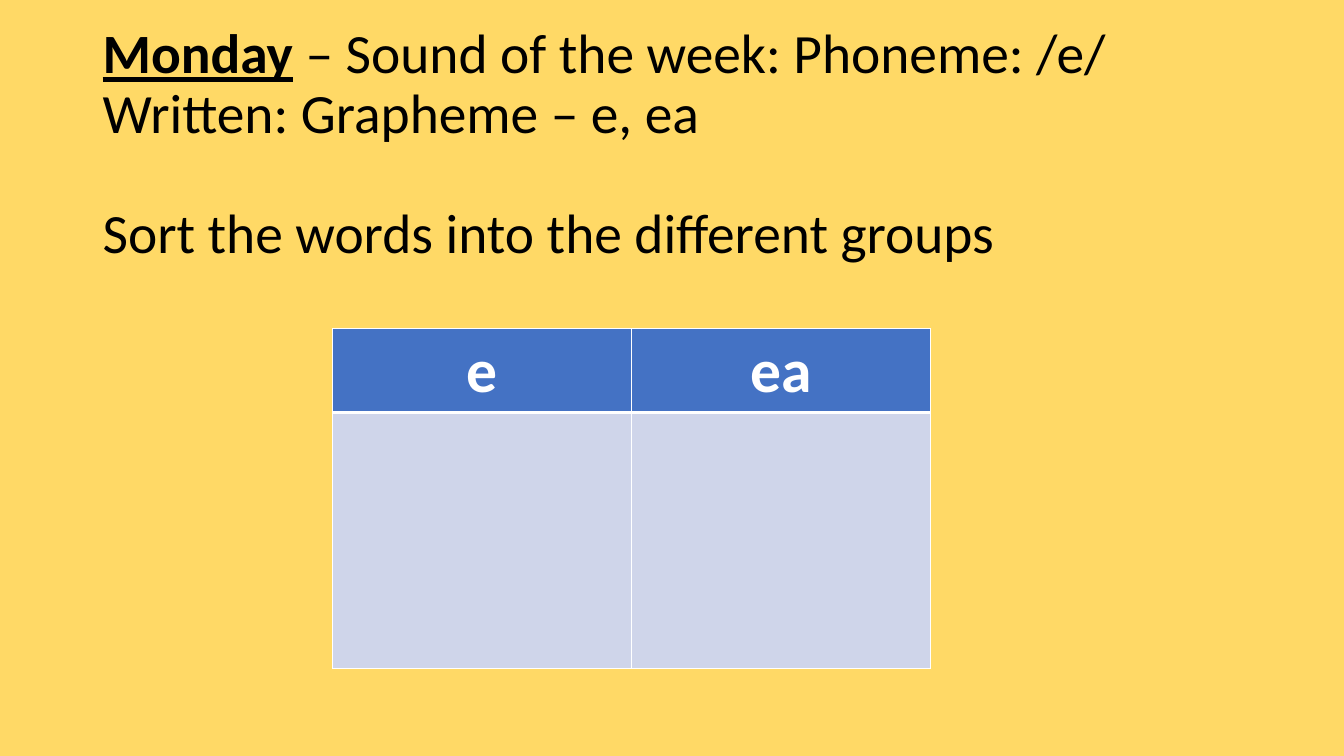
import pptx
import pptx.util
import pptx.dml.color
import pptx.enum.text
import pptx.oxml
import pptx.oxml.ns

Inches = pptx.util.Inches
Pt = pptx.util.Pt
BLACK, WHITE = "000000", "FFFFFF"
GOLD, BLUE, PALE = "FFD966", "4472C4", "CFD5EA"


def paint(target, shade):
    target.rgb = pptx.dml.color.RGBColor.from_string(shade)


def fill(target, shade):
    target.solid()
    paint(target.fore_color, shade)


def write(para, text, size, shade, bold=False, under=False):
    run = para.add_run()
    run.text = text
    font = run.font
    font.name = "Calibri"
    font.size = Pt(size)
    font.bold = bold
    font.underline = under
    paint(font.color, shade)


def edge(cell, widths):
    props = cell._tc.get_or_add_tcPr()
    for spot, (side, width) in enumerate(zip("LRTB", widths)):
        line = pptx.oxml.parse_xml(
            f'<a:ln{side} {pptx.oxml.ns.nsdecls("a")} w="{Pt(width)}">'
            f'<a:solidFill><a:srgbClr val="{WHITE}"/></a:solidFill></a:ln{side}>')
        props.insert(spot, line)


def add_title(slide, left, top, width, height):
    size = 39.6
    box = slide.shapes.add_textbox(Inches(left), Inches(top), Inches(width), Inches(height))
    frame = box.text_frame
    frame.word_wrap = True
    frame.vertical_anchor = pptx.enum.text.MSO_ANCHOR.MIDDLE
    sound = frame.paragraphs[0]
    write(sound, "Monday", size, BLACK, True, True)
    write(sound, " – Sound of the week: Phoneme: /e/ ", size, BLACK)
    sound.add_line_break()
    write(sound, "Written: Grapheme – e, ea", size, BLACK)
    task = frame.add_paragraph()
    task.space_before = Pt(43)
    write(task, "Sort the words into the different groups", size, BLACK)
    for para in frame.paragraphs:
        para.line_spacing = 0.9


def add_groups(slide, left, top, width, height, heads):
    frame = slide.shapes.add_table(
        2, len(heads), Inches(left), Inches(top), Inches(width), Inches(height))
    table = frame.table
    head = 0.83
    table.rows[0].height = Inches(head)
    table.rows[1].height = Inches(height - head)
    for col, text in enumerate(heads):
        top_cell, low_cell = table.cell(0, col), table.cell(1, col)
        fill(top_cell.fill, BLUE)
        fill(low_cell.fill, PALE)
        edge(top_cell, (1, 1, 1, 3))
        edge(low_cell, (1, 1, 3, 1))
        para = top_cell.text_frame.paragraphs[0]
        para.alignment = pptx.enum.text.PP_ALIGN.CENTER
        write(para, text, 44, WHITE, True)


def main():
    deck = pptx.Presentation()
    deck.slide_width = Inches(13.33)
    deck.slide_height = Inches(7.5)
    slide = deck.slides.add_slide(deck.slide_layouts[6])
    fill(slide.background.fill, GOLD)
    add_title(slide, 0.92, 0.72, 11.5, 1.45)
    add_groups(slide, 3.3, 3.26, 5.93, 3.37, ["e", "ea"])
    deck.save("out.pptx")


if __name__ == "__main__":
    main()
